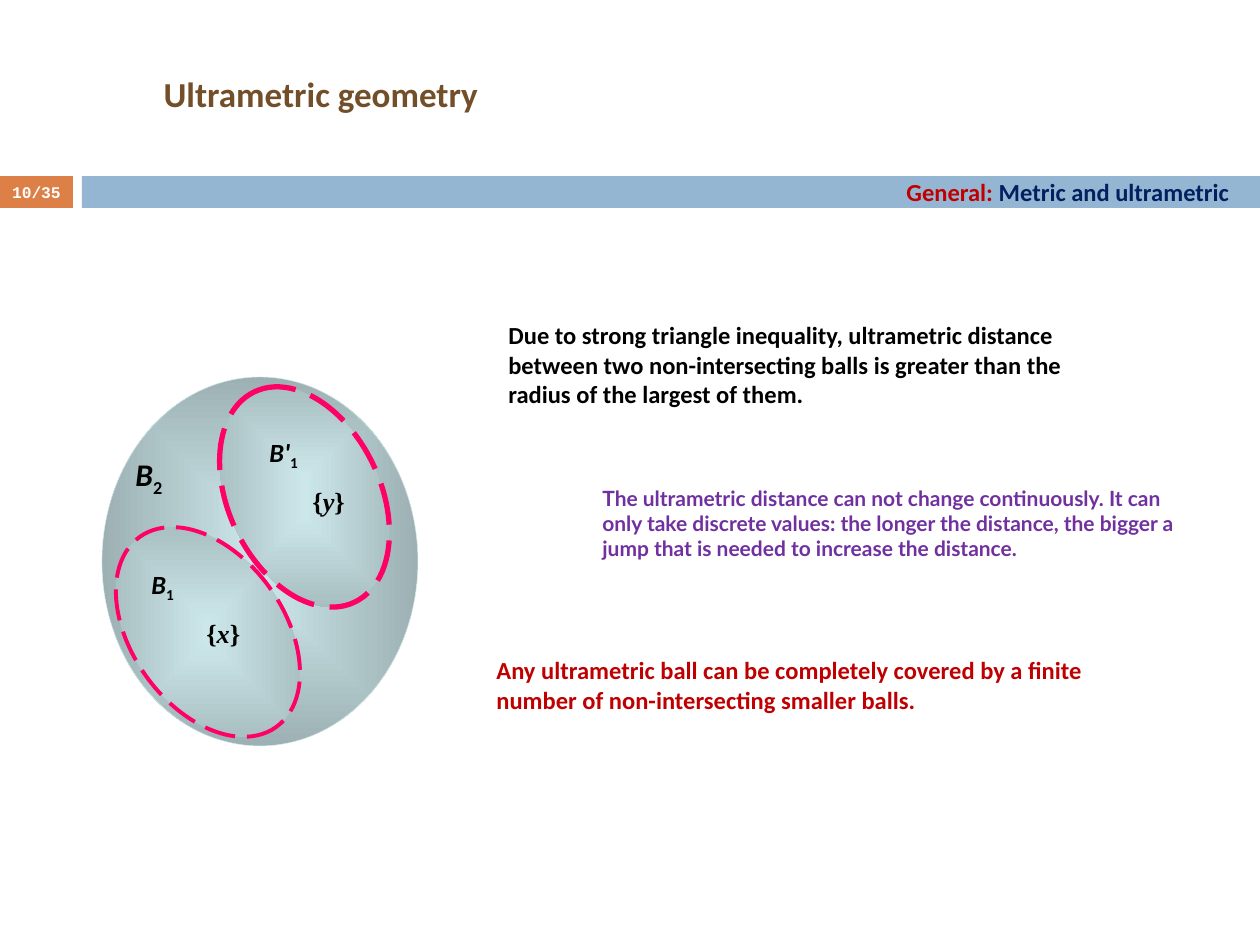
import pptx
import pptx.util
import pptx.oxml
import pptx.dml.color
import pptx.enum.dml
import pptx.enum.shapes
import pptx.enum.text

EMU_PER_PX = 914400 // 126
PAGE_SIZE = (1260, 945)

THEME = {
    "colors": {
        "title": "734F29", "number_bar": "DD8047", "header_bar": "94B6D2",
        "white": "FFFFFF", "black": "000000", "red": "C00000",
        "navy": "002060", "purple": "7030A0", "outline": "D6ECEE",
        "pink": "FF0066", "ball_center": "CCE7EA", "ball_edge": "9DB1B4",
    },
    "sizes": {"title": 20, "body": 14, "note": 12, "number": 9.3,
              "label": 15, "large_label": 18},
    "fonts": {"main": "Calibri", "note": "Lato", "math": "Times New Roman",
              "number": "Courier New"},
}

# Frames are (left, top, width, height) in px.
BARS = [((0, 176, 73, 32), "number_bar"), ((82, 176, 1178, 32), "header_bar")]

TITLE = ("Ultrametric geometry", (151, 60, 398, 66))

# frame, rotation, line colour, line width, dashed
BALLS = [
    ((102, 377, 316, 369), 0, "outline", 0.25, False),
    ((188, 421, 233, 152), 64.6, "pink", 3, True),
    ((91, 556, 234, 152), 234.3, "pink", 2.25, True),
]

# frame, size, font, spans of (text, italic, subscript)
LABELS = [
    ((139, 562, 50, 81), "label", "main", [("B", True, False), ("1", False, True)]),
    ((257, 430, 59, 47), "label", "main", [("B'", True, False), ("1", False, True)]),
    ((123, 449, 67, 54), "large_label", "main", [("B", True, False), ("2", False, True)]),
    ((194, 611, 60, 81), "label", "math",
     [("{", False, False), ("x", True, False), ("}", False, False)]),
    ((300, 479, 58, 81), "label", "math",
     [("{", False, False), ("y", True, False), ("}", False, False)]),
]

# frame, size, font, spans of (text, colour)
TEXTS = [
    ((484, 649, 673, 72), "body", "main",
     [("Any ultrametric ball can be completely covered by a finite number of "
       "non-intersecting smaller balls.", "red")]),
    ((496, 314, 630, 102), "body", "main",
     [("Due to strong triangle inequality, ultrametric distance between two "
       "non-intersecting balls is greater than the radius of the largest of them.",
       "black")]),
    ((590, 479, 624, 115), "note", "note",
     [("The ultrametric distance can not change continuously. It can only take "
       "discrete values: the longer the distance, the bigger a jump that is needed "
       "to increase the distance.", "purple")]),
    ((894, 171, 357, 43), "body", "main",
     [("General:", "red"), (" Metric and ultrametric", "navy")]),
]

PAGE_NUMBER = ("10/35", (0, 175, 73, 34))


def px(values):
    return [value * EMU_PER_PX for value in values]


def rgb(name):
    return pptx.dml.color.RGBColor.from_string(THEME["colors"][name])


def set_all(target, values):
    for name, value in values.items():
        setattr(target, name, value)


def add_span(para, text, size, font, color, italic=False, subscript=False):
    span = para.add_run()
    span.text = text
    set_all(span.font, {"size": pptx.util.Pt(THEME["sizes"][size]),
                        "name": THEME["fonts"][font],
                        "bold": True, "italic": italic})
    span.font.color.rgb = rgb(color)
    if subscript:
        span.font._element.set("baseline", "-25000")


def add_text_box(shapes, frame, **format_values):
    """Add a wrapping text box and return its first paragraph."""
    text_frame = shapes.add_textbox(*px(frame)).text_frame
    set_all(text_frame, {"word_wrap": True, **format_values})
    return text_frame.paragraphs[0]


def fill_from_center(shape):
    """Shade the shape from its centre to its outline."""
    colors = THEME["colors"]
    namespace = "http://schemas.openxmlformats.org/drawingml/2006/main"
    gradient = pptx.oxml.parse_xml(
        f'<a:gradFill xmlns:a="{namespace}" rotWithShape="1"><a:gsLst>'
        f'<a:gs pos="0"><a:srgbClr val="{colors["ball_center"]}"/></a:gs>'
        f'<a:gs pos="100000"><a:srgbClr val="{colors["ball_edge"]}"/></a:gs>'
        '</a:gsLst><a:path path="shape"><a:fillToRect l="50000" t="50000" '
        'r="50000" b="50000"/></a:path></a:gradFill>')
    shape._element.spPr.find(f"{{{namespace}}}prstGeom").addnext(gradient)


def add_bars(page):
    for frame, color in BARS:
        bar = page.shapes.add_shape(
            pptx.enum.shapes.MSO_SHAPE.RECTANGLE, *px(frame))
        bar.shadow.inherit = False
        bar.fill.solid()
        bar.fill.fore_color.rgb = rgb(color)
        bar.line.fill.background()


def add_title(page):
    text, frame = TITLE
    title = page.shapes.title
    set_all(title, dict(zip(("left", "top", "width", "height"), px(frame))))
    set_all(title.text_frame, {
        "vertical_anchor": pptx.enum.text.MSO_ANCHOR.MIDDLE,
        "auto_size": pptx.enum.text.MSO_AUTO_SIZE.NONE})
    para = title.text_frame.paragraphs[0]
    para.alignment = pptx.enum.text.PP_ALIGN.LEFT
    add_span(para, text, "title", "main", "title")


def add_ball_diagram(page):
    shapes = page.shapes.add_group_shape().shapes
    for frame, rotation, color, width, dashed in BALLS:
        ball = shapes.add_shape(pptx.enum.shapes.MSO_SHAPE.OVAL, *px(frame))
        ball.rotation = rotation
        ball.shadow.inherit = False
        fill_from_center(ball)
        ball.line.color.rgb = rgb(color)
        ball.line.width = pptx.util.Pt(width)
        if dashed:
            ball.line.dash_style = pptx.enum.dml.MSO_LINE.LONG_DASH
    for frame, size, font, spans in LABELS:
        para = add_text_box(shapes, frame, margin_right=0)
        for text, italic, subscript in spans:
            add_span(para, text, size, font, "black", italic, subscript)


def add_texts(page):
    for frame, size, font, spans in TEXTS:
        para = add_text_box(page.shapes, frame)
        for text, color in spans:
            add_span(para, text, size, font, color)


def add_page_number(page):
    text, frame = PAGE_NUMBER
    para = add_text_box(page.shapes, frame, margin_left=0, margin_right=0,
                        vertical_anchor=pptx.enum.text.MSO_ANCHOR.MIDDLE)
    para.alignment = pptx.enum.text.PP_ALIGN.CENTER
    add_span(para, text, "number", "number", "white")


def main():
    deck = pptx.Presentation()
    deck.slide_width, deck.slide_height = px(PAGE_SIZE)
    page = deck.slides.add_slide(deck.slide_layouts.get_by_name("Title Only"))
    for add_part in (add_bars, add_title, add_ball_diagram, add_texts,
                     add_page_number):
        add_part(page)
    deck.save("out.pptx")


if __name__ == "__main__":
    main()
